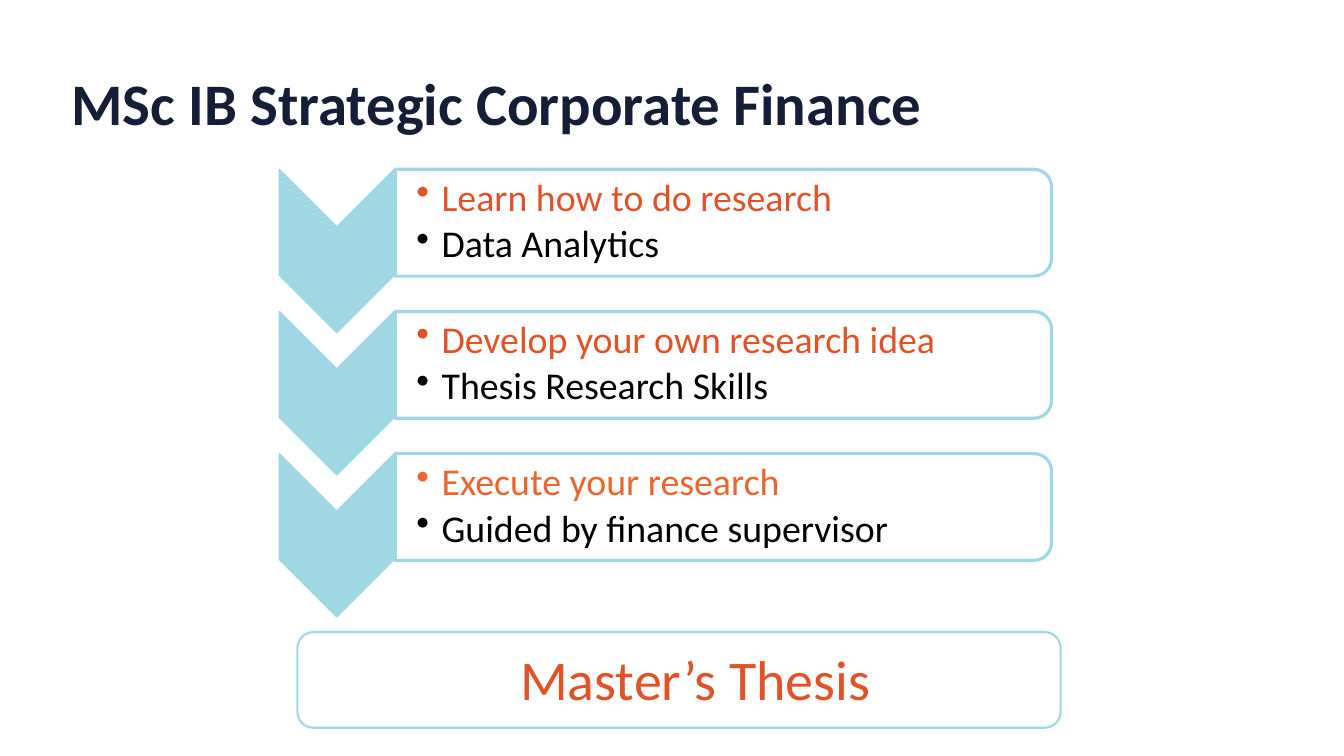
from lxml.etree import SubElement
from pptx import Presentation
from pptx.dml.color import RGBColor
from pptx.enum.shapes import MSO_SHAPE
from pptx.enum.text import MSO_ANCHOR, MSO_AUTO_SIZE, PP_ALIGN
from pptx.oxml.ns import qn
from pptx.util import Pt

SCALE = 9144
BLUE, RED, BLACK, NAVY = "9FD7E4", "E05329", "000000", "151D37"
STEPS = [
    ("Learn how to do research", "Data Analytics", RED),
    ("Develop your own research idea", "Thesis Research Skills", RED),
    ("Execute your research", "Guided by finance supervisor", "EA6631"),
]


def px(n):
    """Turn px into EMU."""
    return round(n * SCALE)


def hue(code):
    """Turn a hex string into a colour."""
    return RGBColor.from_string(code)


def put(item, vals):
    """Set attributes from a dict."""
    for key, val in vals.items():
        setattr(item, key, val)


def shape(slide, kind, box, fill, width, turn=0):
    """Add a blue-edged shape seen in the box, turned by 0 or 90 degrees."""
    x, y, w, h = box
    if turn:
        x, y, w, h = x + (w - h) / 2, y + (h - w) / 2, h, w
    item = slide.shapes.add_shape(kind, px(x), px(y), px(w), px(h))
    item.rotation = turn
    item.shadow.inherit = False
    if fill:
        item.fill.solid()
        item.fill.fore_color.rgb = hue(fill)
    else:
        item.fill.background()
    item.line.color.rgb = hue(BLUE)
    item.line.width = Pt(width)
    return item


def frame(item, pads, anchor):
    """Set the padding and anchor of a text frame."""
    names = ("margin_left", "margin_top", "margin_right", "margin_bottom")
    put(item, {name: px(pad) for name, pad in zip(names, pads)})
    put(item, {"word_wrap": True, "vertical_anchor": anchor,
               "auto_size": MSO_AUTO_SIZE.NONE})
    return item


def write(para, text, size, color, bold=False):
    """Write one styled run in a paragraph."""
    run = para.add_run()
    run.text = text
    put(run.font, {"name": "Calibri", "size": Pt(size), "bold": bold})
    run.font.color.rgb = hue(color)


def bullet(para):
    """Give a paragraph a hanging bullet."""
    props = para._p.get_or_add_pPr()
    props.set("marL", str(px(25)))
    props.set("indent", str(px(-25)))
    SubElement(props, qn("a:buChar"), char="•")


def title(slide, box, text):
    """Place and style the slide title."""
    head = slide.shapes.title
    put(head, dict(zip(("left", "top", "width", "height"), map(px, box))))
    para = frame(head.text_frame, (0, 0, 0, 0), MSO_ANCHOR.MIDDLE).paragraphs[0]
    put(para, {"alignment": PP_ALIGN.LEFT, "line_spacing": 0.9})
    write(para, text, 42, NAVY, True)


def step(slide, box, lead, note, color):
    """Draw a chevron with its panel of two bullets."""
    x, y, w, h = box
    arm = 114
    shape(slide, MSO_SHAPE.CHEVRON, (x, y, arm, h), BLUE, 1, 90)
    left, wide, high = x + arm + 1, w - arm - 1, 106
    panel = shape(slide, MSO_SHAPE.ROUND_2_SAME_RECTANGLE,
                  (left, y, wide, high), "FFFFFF", 2.25, 90)
    tint = panel.fill._xPr.find(qn("a:solidFill"))[0]
    SubElement(tint, qn("a:alpha"), val="90000")
    area = slide.shapes.add_textbox(px(left), px(y + 5), px(wide - 6), px(high - 11))
    text = frame(area.text_frame, (21, 2, 2, 2), MSO_ANCHOR.MIDDLE)
    for para, words, tone in ((text.paragraphs[0], lead, color),
                              (text.add_paragraph(), note, BLACK)):
        bullet(para)
        put(para, {"level": 1, "line_spacing": 0.9, "space_after": Pt(4),
                   "alignment": PP_ALIGN.LEFT})
        write(para, words, 27, tone)


def goal(slide, box, text):
    """Draw the closing box with its label."""
    x, y, w, h = box
    shape(slide, MSO_SHAPE.ROUNDED_RECTANGLE, box, None, 1.5)
    area = slide.shapes.add_textbox(px(x + 211), px(y + 7), px(371), px(77))
    label = frame(area.text_frame, (10, 5, 5, 5), MSO_ANCHOR.TOP)
    write(label.paragraphs[0], text, 40, RED)


def main():
    """Build and save the slide."""
    deck = Presentation()
    put(deck, {"slide_width": px(1333), "slide_height": px(750)})
    slide = deck.slides.add_slide(deck.slide_layouts[5])
    title(slide, (71, 75, 1063, 62), "MSc IB Strategic Corporate Finance")
    for i, words in enumerate(STEPS):
        step(slide, (277, 168 + 141 * i, 766, 162), *words)
    goal(slide, (295, 627, 757, 95), "Master’s Thesis")
    deck.save("out.pptx")


if __name__ == "__main__":
    main()
